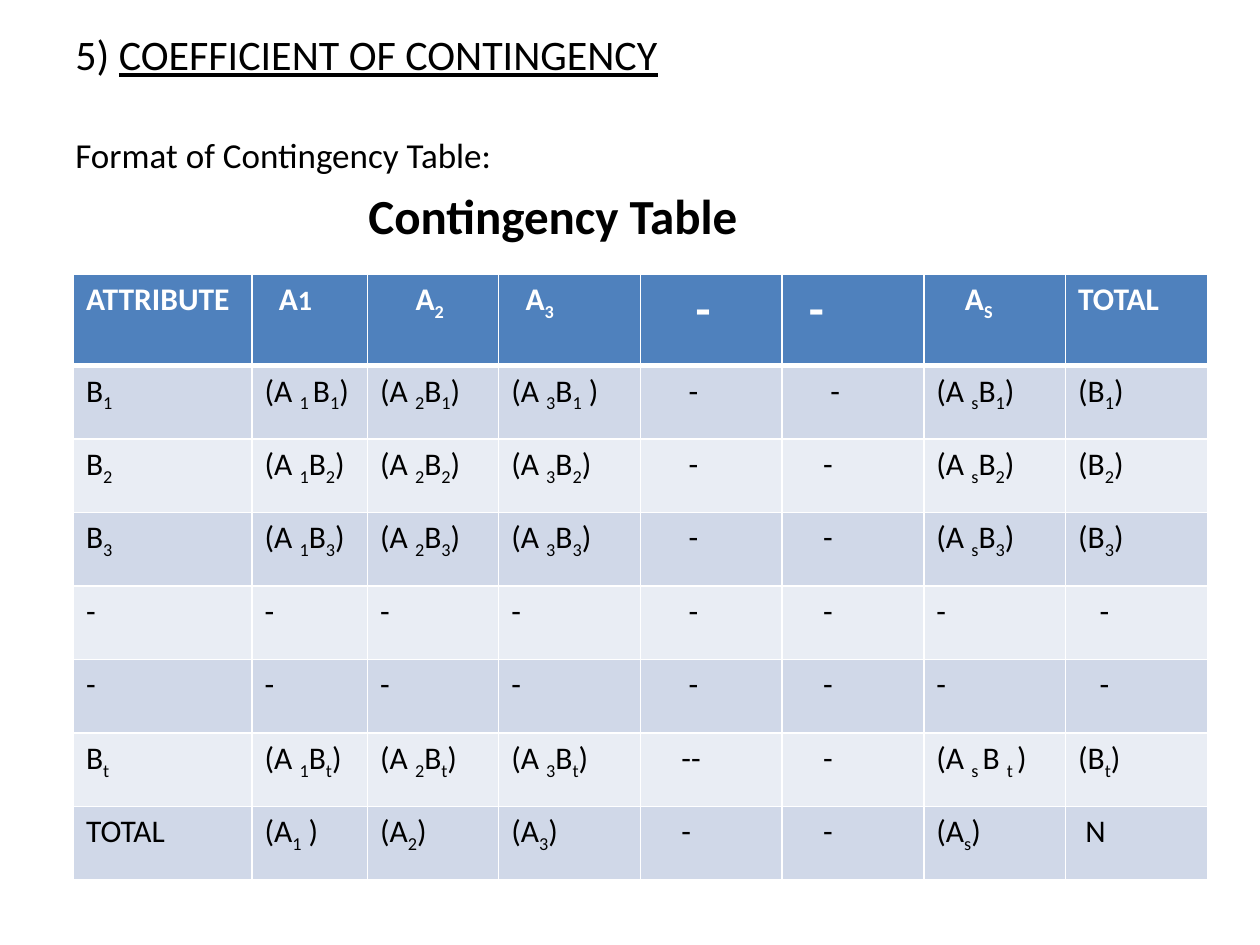
import pptx
import pptx.util
import pptx.dml.color
import lxml.etree
from pptx.util import Pt

A_NS = "http://schemas.openxmlformats.org/drawingml/2006/main"
SPACE = 4.07  # one indent step in a cell


def rgb(value):
    return pptx.dml.color.RGBColor.from_string(value)


def add_text(p, text, size=18, color="000000", bold=False, underline=False,
             font="Calibri"):
    """Add text to a paragraph; parts between underscores are subscripts."""
    for i, part in enumerate(text.split("_")):
        if not part:
            continue
        r = p.add_run()
        r.text = part
        r.font.name = font
        r.font.size = Pt(size)
        r.font.bold = bold
        r.font.underline = underline
        r.font.color.rgb = rgb(color)
        if i % 2:
            r.font._element.set("baseline", "-25000")


class Deck:
    header, bands, white = "4F81BD", ("D0D8E8", "E9EDF4"), "FFFFFF"

    def __init__(self, width, height):
        self.prs = pptx.Presentation()
        self.prs.slide_width, self.prs.slide_height = Pt(width), Pt(height)
        self.s = self.prs.slides.add_slide(self.prs.slide_layouts[6])

    def text_box(self, x, y, w, h, paragraphs):
        """Each paragraph is (space before, indent, [(text, format), ...])."""
        tf = self.s.shapes.add_textbox(Pt(x), Pt(y), Pt(w), Pt(h)).text_frame
        tf.word_wrap = True
        for i, (before, indent, runs) in enumerate(paragraphs):
            p = tf.add_paragraph() if i else tf.paragraphs[0]
            p.space_before = Pt(before)
            p._p.get_or_add_pPr().set("marL", str(Pt(indent)))
            for text, style in runs:
                add_text(p, text, **style)

    def border(self, cell, side, width):
        tc_pr = cell._tc.get_or_add_tcPr()
        ln = lxml.etree.SubElement(tc_pr, f"{{{A_NS}}}ln{side}", w=str(Pt(width)))
        fill = lxml.etree.SubElement(ln, f"{{{A_NS}}}solidFill")
        lxml.etree.SubElement(fill, f"{{{A_NS}}}srgbClr", val=self.white)

    def table(self, x, y, widths, heights, rows):
        """Each cell is (indent steps, [(text, size), ...])."""
        table = self.s.shapes.add_table(
            len(rows), len(widths), Pt(x), Pt(y),
            Pt(sum(widths)), Pt(sum(heights))).table
        for col, width in zip(table.columns, widths):
            col.width = Pt(width)
        for r, row in enumerate(rows):
            table.rows[r].height = Pt(heights[r])
            head = r == 0
            for c, (steps, runs) in enumerate(row):
                cell = table.cell(r, c)
                cell.margin_left = Pt(7.2 + steps * SPACE)
                for side in "LRTB":
                    thick = (r, side) in ((0, "B"), (1, "T"))
                    self.border(cell, side, 3 if thick else 1)
                cell.fill.solid()
                cell.fill.fore_color.rgb = rgb(
                    self.header if head else self.bands[(r - 1) % 2])
                for text, size in runs:
                    add_text(cell.text_frame.paragraphs[0], text, size=size,
                             color=self.white if head else "000000", bold=head)


def plain(text, steps=0):
    return steps, [(text, 18)]


def body_row(b):
    """Cells for attribute class b: joint frequencies, then the row total."""
    joint = [plain(f"(A _{a}_B_{b}_)") for a in "123s"]
    return [plain(f"B_{b}_"), *joint[:3], plain("-", 5), plain("-", 4),
            joint[3], plain(f"(B_{b}_)")]


def contingency_rows():
    head = [plain("ATTRIBUTE"), (2, [("A", 18), ("1", 16)]),
            plain("A_2_", 5), plain("A_3_", 2),
            (6, [("-", 28)]), (2, [("-", 28)]),
            plain("A_S_", 4), plain("TOTAL")]
    dashes = [plain("-", steps) for steps in (0, 0, 0, 0, 5, 4, 0, 3)]
    sums = [plain("TOTAL"), plain("(A_1_ )"), plain("(A_2_)"), plain("(A_3_)"),
            plain("-", 4), plain("-", 4), plain("(A_s_)"), plain("N", 1)]
    rows = [head, *map(body_row, "123"), dashes, dashes, body_row("t"), sums]
    # Cells that are spaced differently from the rule
    rows[1][1] = plain("(A _1 _B_1_)")
    rows[1][3] = plain("(A _3_B_1_ )")
    rows[1][5] = plain("-", 5)
    rows[6][4] = plain("--", 4)
    rows[6][6] = plain("(A _s _B _t _)")
    return rows


def main():
    deck = Deck(720, 540)

    # Headings
    deck.text_box(36, 13, 648, 135, [
        (0, 0, [("5) ", {"size": 24}),
                ("COEFFICIENT OF CONTINGENCY", {"size": 24, "underline": True})]),
        (31, 0, [("Format of Contingency Table:", {"size": 20})]),
        (5.6, 167.5, [("Contingency Table", {"size": 28, "bold": True})]),
    ])

    # Contingency table
    deck.table(42, 156.5, [102, 66, 75] + [81] * 5, [52.5] + [42] * 7,
               contingency_rows())

    deck.prs.save("out.pptx")


if __name__ == "__main__":
    main()
